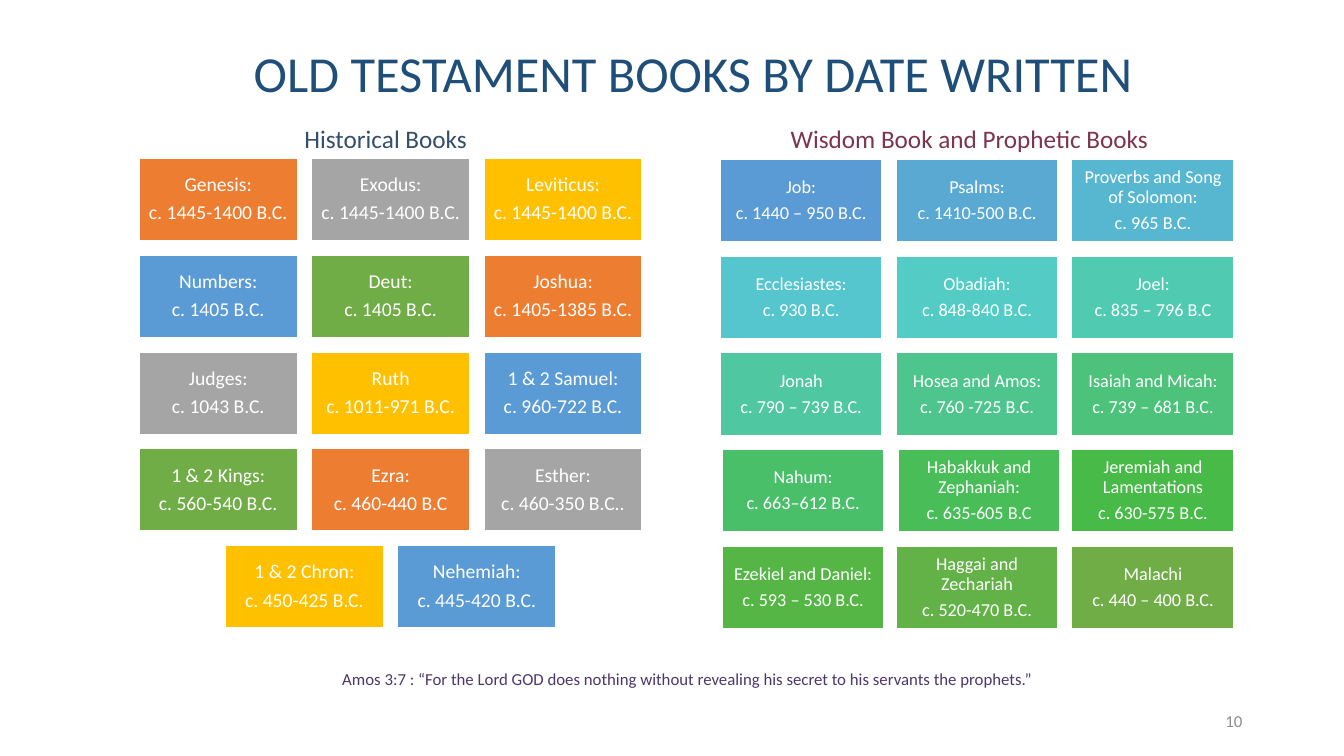
import pptx
import pptx.dml.color
import pptx.enum.shapes
import pptx.enum.text
import pptx.util

Inches = pptx.util.Inches
Pt = pptx.util.Pt
RGBColor = pptx.dml.color.RGBColor
ALIGN = pptx.enum.text.PP_ALIGN
ANCHOR = pptx.enum.text.MSO_ANCHOR
RECT = pptx.enum.shapes.MSO_SHAPE.RECTANGLE

FONT = "Calibri"
WHITE = RGBColor(0xFF, 0xFF, 0xFF)
NAVY = RGBColor(0x1F, 0x4E, 0x79)
SLATE = RGBColor(0x34, 0x4E, 0x6D)
WINE = RGBColor(0x7C, 0x35, 0x4D)
PLUM = RGBColor(0x4C, 0x37, 0x6B)
GRAY = RGBColor(0x8C, 0x8C, 0x8C)

# Historical tiles cycle through five accents; the others run blue to green
ACCENTS = [RGBColor.from_string(c) for c in
           "ED7D31 A5A5A5 FFC000 5B9BD5 70AD47".split()]
BLENDS = [RGBColor.from_string(c) for c in
          ("5B9BD5 59A9D3 57B7D1 55C5CE 53CCC5 51CAB2 4FC7A0 4DC58D "
           "4CC27B 4ABF6A 48BD58 47BA47 55B646 63B247 70AD47").split()]

HISTORY = [
    ("Genesis:", "c. 1445-1400 B.C."),
    ("Exodus:", "c. 1445-1400 B.C."),
    ("Leviticus:", "c. 1445-1400 B.C."),
    ("Numbers:", "c. 1405 B.C."),
    ("Deut:", "c. 1405 B.C."),
    ("Joshua:", "c. 1405-1385 B.C."),
    ("Judges:", "c. 1043 B.C."),
    ("Ruth", "c. 1011-971 B.C."),
    ("1 & 2 Samuel:", "c. 960-722 B.C."),
    ("1 & 2 Kings:", "c. 560-540 B.C."),
    ("Ezra:", "c. 460-440 B.C"),
    ("Esther:", "c. 460-350 B.C.."),
    ("1 & 2 Chron:", "c. 450-425 B.C."),
    ("Nehemiah:", "c. 445-420 B.C."),
]
PROPHETS = [
    ("Job:", "c. 1440 – 950 B.C."),
    ("Psalms:", "c. 1410-500 B.C."),
    ("Proverbs and Song of Solomon:", "c. 965 B.C."),
    ("Ecclesiastes:", "c. 930 B.C."),
    ("Obadiah:", "c. 848-840 B.C."),
    ("Joel:", "c. 835 – 796 B.C"),
    ("Jonah", "c. 790 – 739 B.C."),
    ("Hosea and Amos:", "c. 760 -725 B.C."),
    ("Isaiah and Micah:", "c. 739 – 681 B.C."),
    ("Nahum:", "c. 663–612 B.C."),
    ("Habakkuk and Zephaniah:", "c. 635-605 B.C"),
    ("Jeremiah and Lamentations", "c. 630-575 B.C."),
    ("Ezekiel and Daniel:", "c. 593 – 530 B.C."),
    ("Haggai and Zechariah", "c. 520-470 B.C."),
    ("Malachi", "c. 440 – 400 B.C."),
]
SHIFTS = {9: 0.02, 10: 0.02, 12: 0.02}

COLS = 3
TILE_H = 0.82
ROW_STEP = 0.96


def style(para, size, color, align=ALIGN.CENTER):
    para.alignment = align
    for run in para.runs:
        run.font.name = FONT
        run.font.size = Pt(size)
        run.font.color.rgb = color


def add_title(slide, text, box):
    title = slide.shapes.title
    title.left, title.top, title.width, title.height = map(Inches, box)
    frame = title.text_frame
    frame.text = text
    frame.vertical_anchor = ANCHOR.MIDDLE
    frame.paragraphs[0].line_spacing = 0.9
    style(frame.paragraphs[0], 36, NAVY)


def add_label(slide, text, box, size, color, align=ALIGN.CENTER,
              anchor=ANCHOR.TOP):
    frame = slide.shapes.add_textbox(*map(Inches, box)).text_frame
    frame.word_wrap = True
    frame.vertical_anchor = anchor
    frame.text = text
    style(frame.paragraphs[0], size, color, align)


def add_tile(slide, lines, box, fill, size, inset):
    tile = slide.shapes.add_shape(RECT, *map(Inches, box))
    tile.shadow.inherit = False
    tile.fill.solid()
    tile.fill.fore_color.rgb = fill
    tile.line.color.rgb = WHITE
    tile.line.width = Pt(1)
    frame = tile.text_frame
    frame.word_wrap = True
    frame.vertical_anchor = ANCHOR.MIDDLE
    frame.margin_left = frame.margin_right = Inches(inset)
    frame.margin_top = frame.margin_bottom = Inches(inset)
    frame.text = "\n".join(lines)
    for para in frame.paragraphs:
        para.line_spacing = 0.9
        para.space_after = Pt(round(size * 0.35, 1))
        style(para, size, WHITE)


def add_grid(slide, books, box, step, fills, size, inset, shifts):
    """Fill rows of three tiles; a short last row is centred."""
    left, top, width = box
    for i, lines in enumerate(books):
        row, col = divmod(i, COLS)
        count = min(COLS, len(books) - row * COLS)
        x = left + (col + (COLS - count) / 2) * step + shifts.get(i, 0)
        place = (x, top + row * ROW_STEP, width, TILE_H)
        add_tile(slide, lines, place, fills[i % len(fills)], size, inset)


def main():
    deck = pptx.Presentation()
    deck.slide_width = Inches(13.33)
    deck.slide_height = Inches(7.5)
    slide = deck.slides.add_slide(deck.slide_layouts[5])

    add_title(slide, "OLD TESTAMENT BOOKS BY DATE WRITTEN",
              (1.38, 0.4, 10.99, 0.71))

    # Left group: historical books
    add_grid(slide, HISTORY, (1.38, 1.57, 1.57), 1.71, ACCENTS, 14, 0.06, {})
    add_label(slide, "Historical Books", (1.38, 1.17, 4.89, 0.4), 18, SLATE)

    # Right group: wisdom and prophetic books
    add_grid(slide, PROPHETS, (7.14, 1.58, 1.61), 1.745, BLENDS, 13, 0.05,
             SHIFTS)
    add_label(slide, "Wisdom Book and Prophetic Books",
              (7.17, 1.17, 4.89, 0.4), 18, WINE)

    # Verse and page number
    add_label(slide, "Amos 3:7 : “For the Lord GOD does nothing without "
              "revealing his secret to his servants the prophets.”",
              (1.38, 6.59, 10.88, 0.3), 12, PLUM)
    add_label(slide, "10", (9.42, 6.95, 3, 0.4), 12, GRAY, ALIGN.RIGHT,
              ANCHOR.MIDDLE)

    deck.save("out.pptx")


if __name__ == "__main__":
    main()
